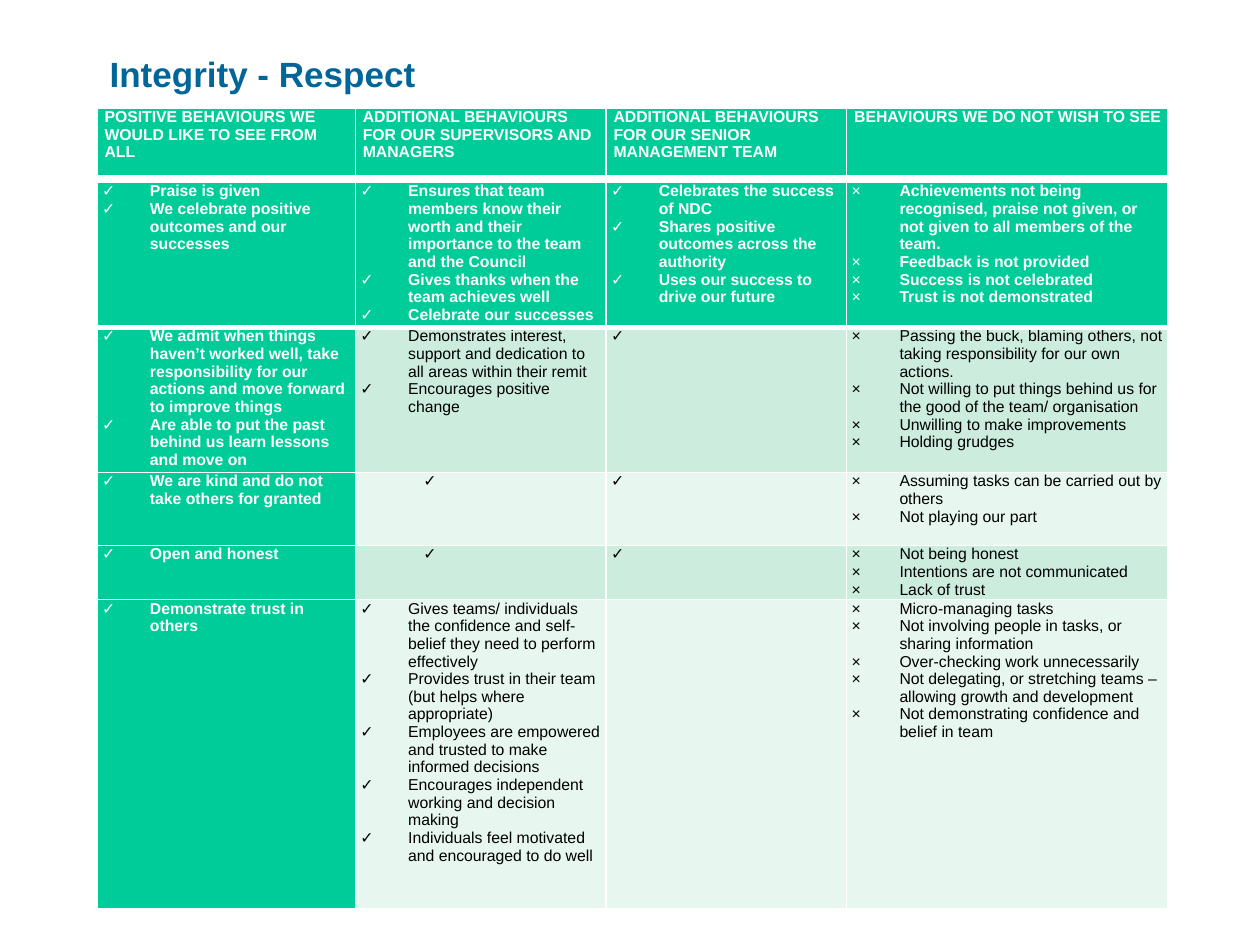
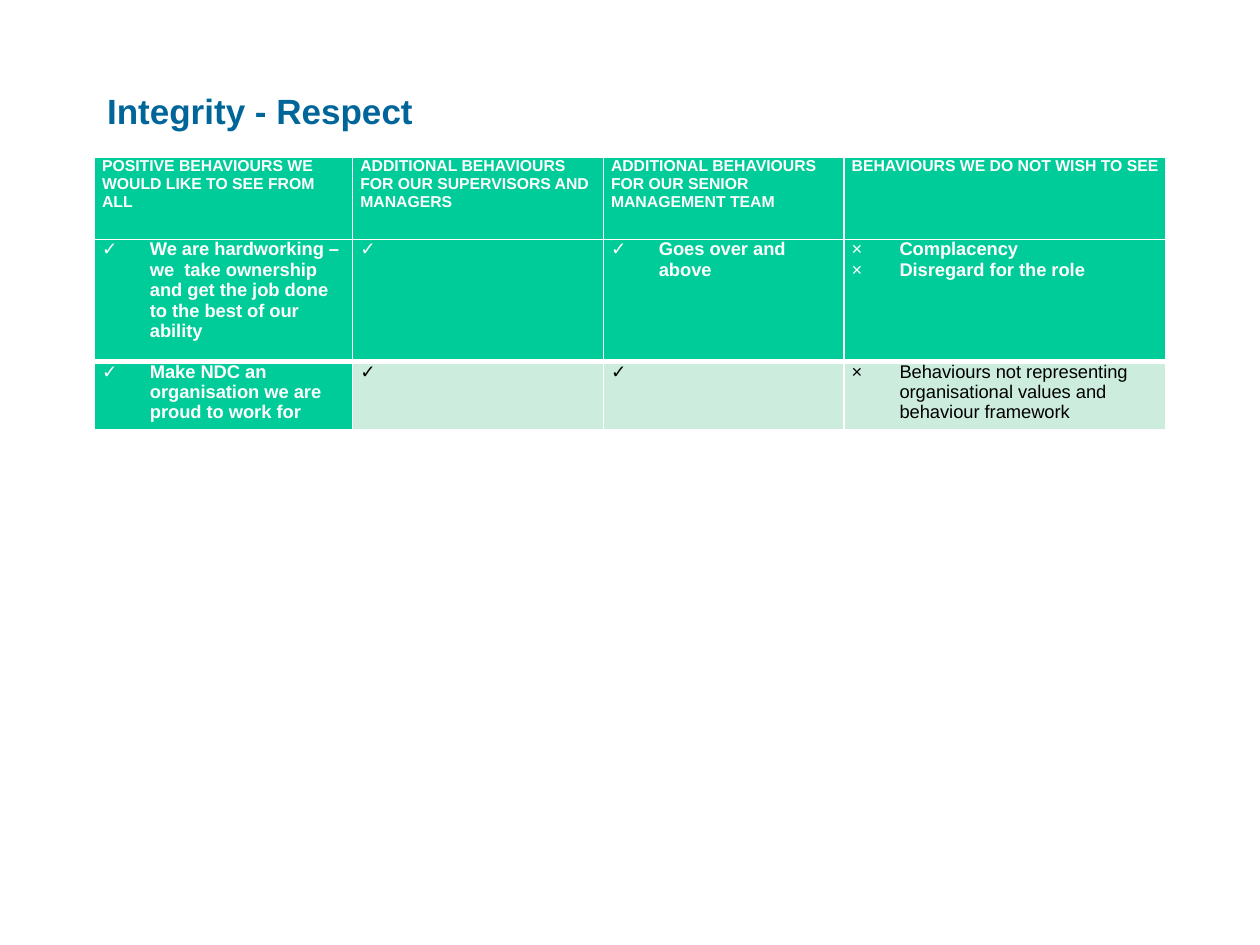
from lxml.etree import SubElement
from pptx import Presentation
from pptx.dml.color import RGBColor
from pptx.enum.text import MSO_ANCHOR, MSO_AUTO_SIZE, PP_ALIGN
from pptx.oxml.ns import qn
from pptx.util import Inches, Pt

COLORS = {
    "title": "006699",
    "strong": "00CC99",
    "odd_row": "CCECDE",
    "even_row": "E7F6EF",
    "light": "FFFFFF",
    "dark": "000000",
}
FONT = "Arial"
TITLE = "Integrity - Respect"
COLUMN_WIDTHS = [2.05, 1.99, 1.91, 2.55]
HEADINGS = [
    ["POSITIVE BEHAVIOURS WE WOULD LIKE TO SEE FROM ALL"],
    ["ADDITIONAL BEHAVIOURS FOR OUR SUPERVISORS AND MANAGERS"],
    ["ADDITIONAL BEHAVIOURS FOR OUR SENIOR MANAGEMENT TEAM"],
    ["BEHAVIOURS WE DO NOT WISH TO SEE"],
]
MARKERS = ["✓", "✓", "✓", "×"]
NO_MARKERS = [None] * 4
HANGING = 0.38
# Cells that show only their bullet, which needs a character to be drawn
LONE_TICK = [" "]
INDENTED_TICK = [" "]

respect_behaviours = [
    [
        ["Praise is given",
         "We celebrate positive outcomes and our successes"],
        ["Ensures that team members know their worth and their importance "
         "to the team and the Council",
         "Gives thanks when the team achieves well",
         "Celebrate our successes"],
        ["Celebrates the success of NDC",
         "Shares positive outcomes across the authority",
         "Uses our success to drive our future"],
        ["Achievements not being recognised, praise not given, or not given "
         "to all members of the team.",
         "Feedback is not provided",
         "Success is not celebrated",
         "Trust is not demonstrated"],
    ],
    [
        ["We admit when things haven’t worked well, take responsibility for "
         "our actions and move forward to improve things",
         "Are able to put the past behind us learn lessons and move on"],
        ["Demonstrates interest, support and dedication to all areas within "
         "their remit",
         "Encourages positive change"],
        LONE_TICK,
        ["Passing the buck, blaming others, not taking responsibility for "
         "our own actions.",
         "Not willing to put things behind us for the good of the team/ "
         "organisation",
         "Unwilling to make improvements",
         "Holding grudges"],
    ],
    [
        ["We are kind and do not take others for granted"],
        INDENTED_TICK,
        LONE_TICK,
        ["Assuming tasks can be carried out by others",
         "Not playing our part"],
    ],
    [
        ["Open and honest"],
        INDENTED_TICK,
        LONE_TICK,
        ["Not being honest",
         "Intentions are not communicated",
         "Lack of trust"],
    ],
    [
        ["Demonstrate trust in others"],
        ["Gives teams/ individuals the confidence and self-belief they need "
         "to perform effectively",
         "Provides trust in their team  (but helps where appropriate)",
         "Employees are empowered and trusted to make informed decisions",
         "Encourages independent working and decision making",
         "Individuals feel motivated and encouraged to do well"],
        [],
        ["Micro-managing tasks",
         "Not involving people in tasks, or sharing information",
         "Over-checking work unnecessarily",
         "Not delegating, or stretching teams – allowing growth and "
         "development",
         "Not demonstrating confidence and belief in team"],
    ],
]

ownership_behaviours = [
    [
        ["We are hardworking – we  take ownership and get the job done to "
         "the best of our ability"],
        LONE_TICK,
        ["Goes over and above"],
        ["Complacency", "Disregard for the role"],
    ],
    [
        ["Make NDC an organisation we are proud to work for"],
        LONE_TICK,
        LONE_TICK,
        ["Behaviours not representing organisational values and behaviour "
         "framework"],
    ],
]


def style_cell(cell, fill, top_width, bottom_width, inset):
    cell.margin_left = Inches(inset)
    cell.margin_right = Inches(0.04)
    cell.margin_top = cell.margin_bottom = 0
    properties = cell._tc.get_or_add_tcPr()
    for side, width in zip("LRTB", (1, 1, top_width, bottom_width)):
        border = SubElement(properties, qn(f"a:ln{side}"), w=str(Pt(width)))
        border_fill = SubElement(border, qn("a:solidFill"))
        SubElement(border_fill, qn("a:srgbClr"), val=COLORS["light"])
    cell.fill.solid()
    cell.fill.fore_color.rgb = RGBColor.from_string(COLORS[fill])


def add_behaviours(slide, left, top, heights, rows, markers, inset, size):
    """Add a table whose first row and first column are strongly coloured."""
    table = slide.shapes.add_table(
        len(rows), len(COLUMN_WIDTHS), Inches(left), Inches(top),
        Inches(sum(COLUMN_WIDTHS)), Inches(sum(heights))).table
    table.first_row = table.horz_banding = False
    for column, width in zip(table.columns, COLUMN_WIDTHS):
        column.width = Inches(width)
    for r, (height, row) in enumerate(zip(heights, rows)):
        table.rows[r].height = Inches(height)
        for c, (behaviours, marker) in enumerate(zip(row, markers)):
            strong = r == 0 or c == 0
            band = "odd_row" if r % 2 else "even_row"
            cell = table.cell(r, c)
            style_cell(cell, "strong" if strong else band,
                       3 if r == 1 else 1, 3 if r == 0 else 1, inset)
            margin = HANGING + (0.5 if behaviours is INDENTED_TICK else 0)
            frame = cell.text_frame
            for i, behaviour in enumerate(behaviours):
                paragraph = frame.add_paragraph() if i else frame.paragraphs[0]
                paragraph.text = behaviour
                if marker:
                    properties = paragraph._p.get_or_add_pPr()
                    properties.set("marL", str(Inches(margin)))
                    properties.set("indent", str(-Inches(HANGING)))
                    SubElement(properties, qn("a:buFont"), typeface=FONT)
                    SubElement(properties, qn("a:buChar"), char=marker)
                font = paragraph.font
                font.name = FONT
                font.size = Pt(size)
                font.bold = strong
                font.color.rgb = RGBColor.from_string(
                    COLORS["light" if strong else "dark"])


# left, title top and height, header top and height,
# body top, row heights, inset and text size, body rows
pages = [
    (0.77, 0.33, 0.51, 0.86, 0.55,
     1.45, [1.15, 1.15, 0.58, 0.43, 2.45], 0.04, 9, respect_behaviours),
    (0.75, 0.5, 0.75, 1.25, 0.67,
     1.9, [0.97, 0.54], 0.06, 10.5, ownership_behaviours),
]

presentation = Presentation()
presentation.slide_width = Inches(10)
presentation.slide_height = Inches(7.5)

for (left, title_top, title_height, header_top, header_height,
     body_top, body_heights, body_inset, body_size, behaviours) in pages:
    slide = presentation.slides.add_slide(presentation.slide_layouts[5])
    title = slide.shapes.title
    title.left, title.top = Inches(left), Inches(title_top)
    title.width, title.height = Inches(8.5), Inches(title_height)
    title.text = TITLE
    title.text_frame.auto_size = MSO_AUTO_SIZE.NONE
    title.text_frame.vertical_anchor = MSO_ANCHOR.MIDDLE
    heading = title.text_frame.paragraphs[0]
    heading.alignment = PP_ALIGN.LEFT
    heading.font.name = FONT
    heading.font.size = Pt(20)
    heading.font.bold = True
    heading.font.color.rgb = RGBColor.from_string(COLORS["title"])

    add_behaviours(slide, left, header_top, [header_height], [HEADINGS],
                   NO_MARKERS, 0.06, 9)
    add_behaviours(slide, left, body_top, body_heights, behaviours,
                   MARKERS, body_inset, body_size)

presentation.save("out.pptx")
